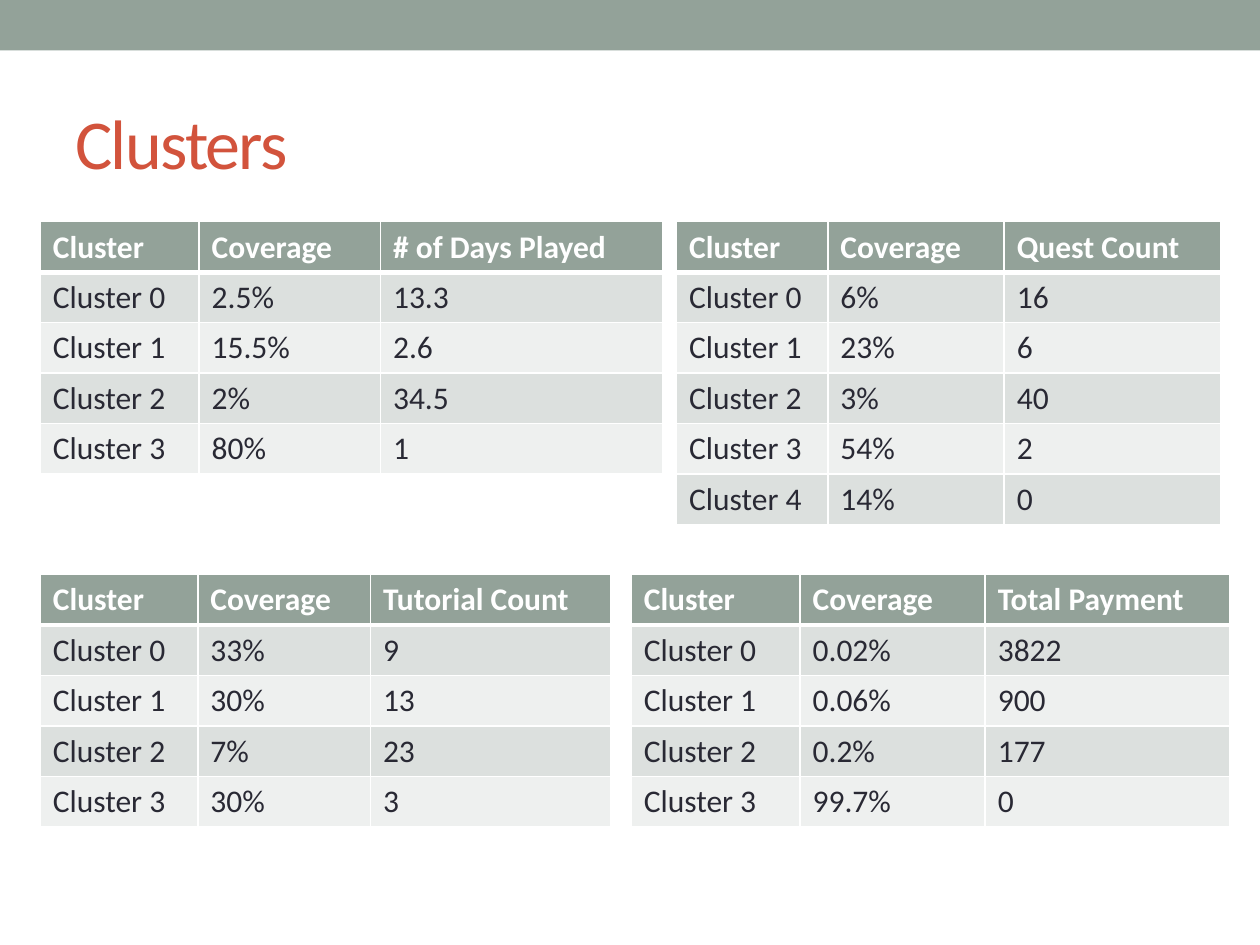
from lxml import etree
from pptx import Presentation
from pptx import util as u
from pptx.dml.color import RGBColor
from pptx.enum import shapes, text
from pptx.oxml.ns import qn

SAGE = RGBColor(0x93, 0xA2, 0x99)
BAND_DARK = RGBColor(0xDC, 0xE0, 0xDE)
BAND_LIGHT = RGBColor(0xEE, 0xF0, 0xEF)
RUST = RGBColor(0xD2, 0x53, 0x3C)
INK = RGBColor(0x29, 0x29, 0x34)
WHITE = RGBColor(0xFF, 0xFF, 0xFF)

ROW_HEIGHT = 0.4
TOP_ROW, BOTTOM_ROW = 1.76, 4.56

# Each table: left, top, column widths, measure, (coverage, value) per cluster
CLUSTER_TABLES = [
    (0.32, TOP_ROW, (1.26, 1.44, 2.24), "# of Days Played",
     [("2.5%", "13.3"), ("15.5%", "2.6"), ("2%", "34.5"), ("80%", "1")]),
    (5.37, TOP_ROW, (1.2, 1.4, 1.72), "Quest Count",
     [("6%", "16"), ("23%", "6"), ("3%", "40"), ("54%", "2"), ("14%", "0")]),
    (0.32, BOTTOM_ROW, (1.25, 1.37, 1.91), "Tutorial Count",
     [("33%", "9"), ("30%", "13"), ("7%", "23"), ("30%", "3")]),
    (5.01, BOTTOM_ROW, (1.34, 1.47, 1.94), "Total Payment",
     [("0.02%", "3822"), ("0.06%", "900"), ("0.2%", "177"), ("99.7%", "0")]),
]


class ClusterSlide:
    """Holds the slide and its style, and draws each kind of element."""

    font_name = "Calibri"

    def __init__(self, slide):
        self.slide = slide

    def format_run(self, run, size, color, bold=False):
        values = {"name": self.font_name, "size": u.Pt(size), "bold": bold}
        for attribute, value in values.items():
            setattr(run.font, attribute, value)
        run.font.color.rgb = color

    def band(self, left, top, width, height, color):
        band = self.slide.shapes.add_shape(
            shapes.MSO_SHAPE.RECTANGLE,
            *map(u.Inches, (left, top, width, height)))
        band.shadow.inherit = False
        band.fill.solid()
        band.fill.fore_color.rgb = color
        band.line.fill.background()

    def title(self, wording, left, top, width, height):
        title = self.slide.shapes.add_textbox(
            *map(u.Inches, (left, top, width, height)))
        frame_format = {"word_wrap": True,
                        "vertical_anchor": text.MSO_ANCHOR.MIDDLE}
        for attribute, value in frame_format.items():
            setattr(title.text_frame, attribute, value)
        run = title.text_frame.paragraphs[0].add_run()
        run.text = wording
        self.format_run(run, 40, RUST)
        run.font._element.set("spc", "-100")

    def borders(self, cell, **widths):
        properties = cell._tc.get_or_add_tcPr()
        for side in "LRTB":
            line = etree.SubElement(properties, qn(f"a:ln{side}"),
                                    w=str(u.Pt(widths.get(side, 1))))
            fill = etree.SubElement(line, qn("a:solidFill"))
            etree.SubElement(fill, qn("a:srgbClr"), val=str(WHITE))

    def table(self, left, top, widths, rows):
        table = self.slide.shapes.add_table(
            len(rows), len(widths), u.Inches(left), u.Inches(top),
            u.Inches(sum(widths)), u.Inches(ROW_HEIGHT * len(rows))).table
        for column, width in zip(table.columns, widths):
            column.width = u.Inches(width)
        for r, row in enumerate(rows):
            table.rows[r].height = u.Inches(ROW_HEIGHT)
            header = r == 0
            band_color = BAND_DARK if r % 2 else BAND_LIGHT
            # A heavy rule parts the header from the first cluster
            heavy = {0: {"B": 3}, 1: {"T": 3}}.get(r, {})
            for c, wording in enumerate(row):
                cell = table.cell(r, c)
                self.borders(cell, **heavy)
                cell.fill.solid()
                cell.fill.fore_color.rgb = SAGE if header else band_color
                run = cell.text_frame.paragraphs[0].add_run()
                run.text = wording
                self.format_run(run, 18, WHITE if header else INK, header)


def main():
    deck = Presentation()
    deck.slide_width, deck.slide_height = u.Inches(10), u.Inches(7.5)
    page = ClusterSlide(deck.slides.add_slide(deck.slide_layouts[6]))

    # Top band and title
    page.band(0, 0, 10, 0.4, SAGE)
    page.title("Clusters", 0.5, 0.58, 9, 1.08)

    # Cluster tables
    for left, top, widths, measure, clusters in CLUSTER_TABLES:
        rows = [("Cluster", "Coverage", measure)]
        rows += [(f"Cluster {i}", *values) for i, values in enumerate(clusters)]
        page.table(left, top, widths, rows)

    deck.save("out.pptx")


if __name__ == "__main__":
    main()
